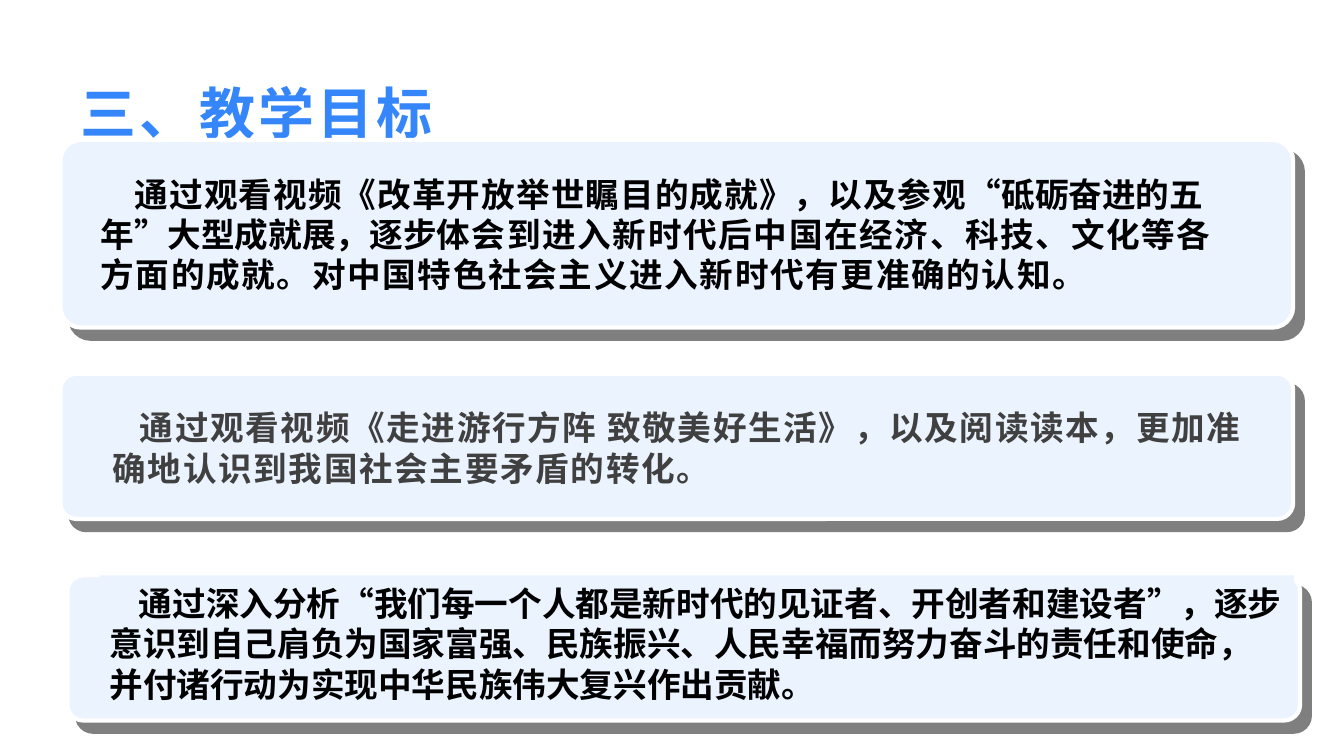
from dataclasses import dataclass

from lxml.etree import SubElement
from pptx import Presentation
from pptx.dml.color import RGBColor
from pptx.enum.lang import MSO_LANGUAGE_ID
from pptx.enum.shapes import MSO_SHAPE
from pptx.enum.text import MSO_ANCHOR, PP_ALIGN
from pptx.oxml.ns import qn
from pptx.util import Pt


@dataclass(frozen=True)
class Theme:
    font: str = "Noto Sans CJK SC"
    title: RGBColor = RGBColor(0x35, 0x86, 0xFB)
    panel: RGBColor = RGBColor(0xEB, 0xF3, 0xFF)
    edge: RGBColor = RGBColor(0xFF, 0xFF, 0xFF)
    ink: RGBColor = RGBColor(0, 0, 0)
    soft_ink: RGBColor = RGBColor(0x40, 0x40, 0x40)
    title_size: int = 40
    body_size: int = 24
    leading: float = 1.2


THEME = Theme()

# Each run is (text, letter spacing in points); inset is the text box within its card.
GOALS = [
    dict(box=(43.2, 100, 880.5, 134), inset=(21.6, 18.7, 825, 94.3), indent=24.5,
         color=THEME.ink, filled=False, runs=[
             ("通过观看视频《改革开放举世瞩目的成就》，以及参观", 0.8),
             ("“砥砺奋进的五年”大型成就展，逐步", 0),
             ("体会到进入新时代后中国在经济、科技、文化等各方面的成就。"
              "对中国特色社会主义进入新时代有更准确的认知。", 1.2)]),
    dict(box=(48.2, 411, 880.5, 103.7), inset=(23, 0, 853, 94.3), indent=21,
         color=THEME.ink, filled=True, runs=[
             ("通过深入分析“我们每一个人都是新时代的见证者、开创者和建设者”，"
              "逐步意识到自己肩负为国家富强、民族振兴、人民幸福而努力奋斗的责任和使命，"
              "并付诸行动为实现中华民族伟大复兴作出贡献。", 0)]),
    dict(box=(43.2, 267, 880.5, 103.7), inset=(30.2, 18.7, 832.3, 65.5), indent=19.5,
         color=THEME.soft_ink, filled=False, runs=[
             ("通过观看视频《走进游行方阵 致敬美好生活》，以及阅读读本，"
              "更加准确地认识到我国社会主要矛盾的转化。", 1.2)]),
]


def set_attrs(obj, values):
    for name, value in values.items():
        setattr(obj, name, value)


def write_text(tf, runs, size, color, indent=0, wrap=True):
    """Fill a text frame with one top-aligned paragraph of spaced runs."""
    set_attrs(tf, dict(word_wrap=wrap, vertical_anchor=MSO_ANCHOR.TOP,
                       margin_left=Pt(7.2), margin_right=Pt(7.2),
                       margin_top=Pt(3.6 + 0.07 * size), margin_bottom=Pt(0)))
    p = tf.paragraphs[0]
    set_attrs(p, dict(alignment=PP_ALIGN.LEFT, line_spacing=Pt(size * THEME.leading),
                      space_before=Pt(0), space_after=Pt(0)))
    pPr = p._p.get_or_add_pPr()
    pPr.set("marL", "0")
    pPr.set("indent", str(int(Pt(indent))))
    for text, spacing in runs:
        r = p.add_run()
        r.text = text
        set_attrs(r.font, dict(name=THEME.font, size=Pt(size), bold=True,
                               language_id=MSO_LANGUAGE_ID.SIMPLIFIED_CHINESE))
        r.font.color.rgb = color
        rPr = r._r.get_or_add_rPr()
        rPr.set("spc", str(int(spacing * 100)))
        SubElement(rPr, qn("a:ea"), typeface=THEME.font)


def add_hard_shadow(sp):
    sp.shadow.inherit = False
    effects = sp._element.spPr.find(qn("a:effectLst"))
    shadow = SubElement(effects, qn("a:outerShdw"), blurRad="0", dist=str(int(Pt(10.6))),
                        dir=str(49 * 60000), algn="ctr", rotWithShape="0")
    black = SubElement(shadow, qn("a:srgbClr"), val="000000")
    SubElement(black, qn("a:alpha"), val="50000")


def add_title(s, box, text):
    sp = s.shapes.title
    set_attrs(sp, dict(zip(("left", "top", "width", "height"), map(Pt, box))))
    write_text(sp.text_frame, [(text, 2.4)], THEME.title_size, THEME.title, wrap=False)


def add_goal_card(s, box, inset, indent, color, filled, runs):
    """Draw a rounded panel with its text placed relative to the panel."""
    x, y, w, h = box
    dx, dy, text_w, text_h = inset
    group = s.shapes.add_group_shape()
    panel = group.shapes.add_shape(MSO_SHAPE.ROUNDED_RECTANGLE, *map(Pt, (x, y, w, h)))
    panel.adjustments[0] = 0.11
    panel.fill.solid()
    panel.fill.fore_color.rgb = THEME.panel
    panel.line.color.rgb = THEME.edge
    panel.line.width = Pt(3)
    add_hard_shadow(panel)

    label = group.shapes.add_textbox(*map(Pt, (x + dx, y + dy, text_w, text_h)))
    if filled:
        label.fill.solid()
        label.fill.fore_color.rgb = THEME.panel
    write_text(label.text_frame, runs, THEME.body_size, color, indent)


def main():
    prs = Presentation()
    prs.slide_width, prs.slide_height = Pt(960), Pt(540)
    s = prs.slides.add_slide(prs.slide_layouts[5])
    add_title(s, (50.4, 49.7, 271.4, 85), "三、教学目标")
    for goal in GOALS:
        add_goal_card(s, **goal)
    prs.save("out.pptx")


if __name__ == "__main__":
    main()
